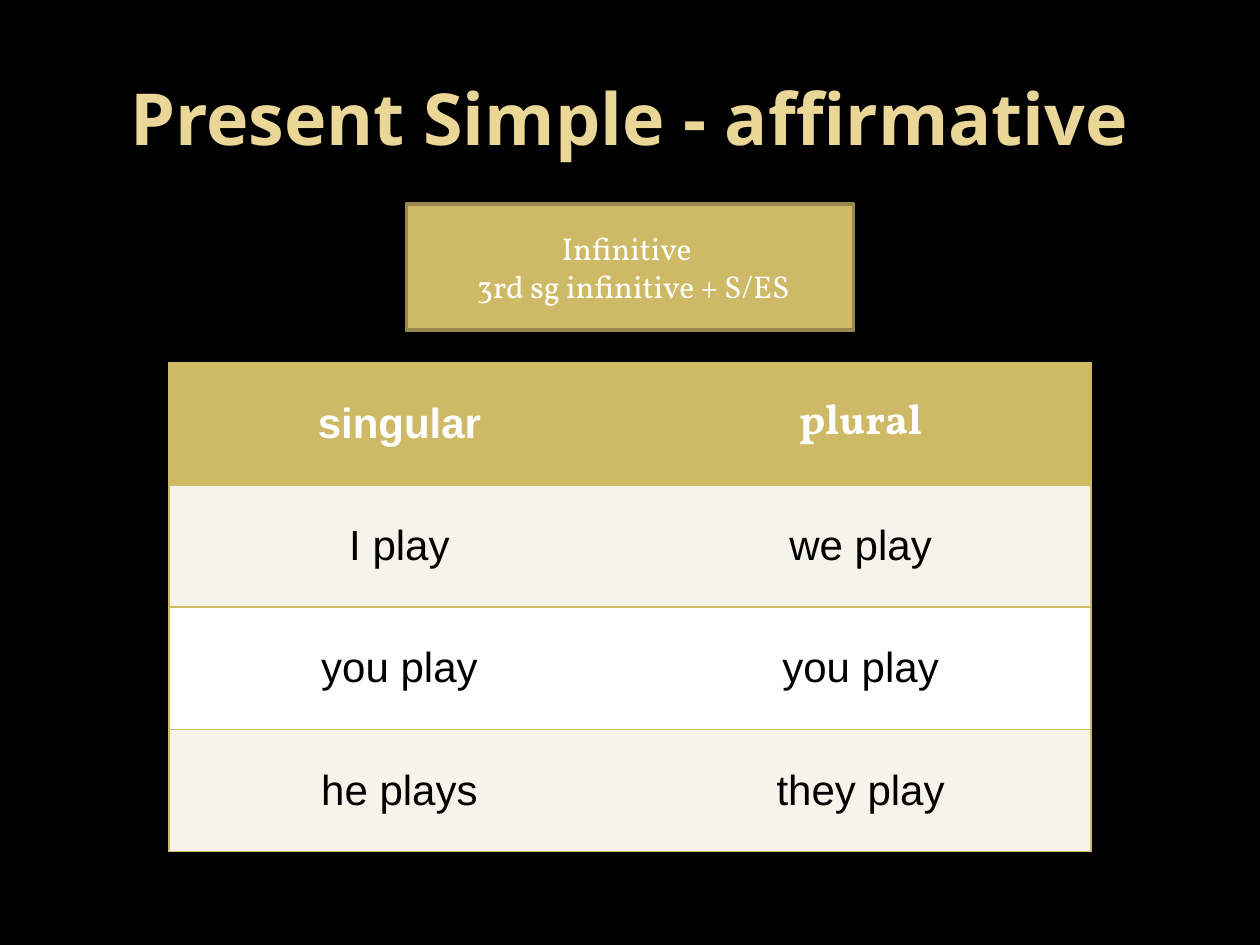
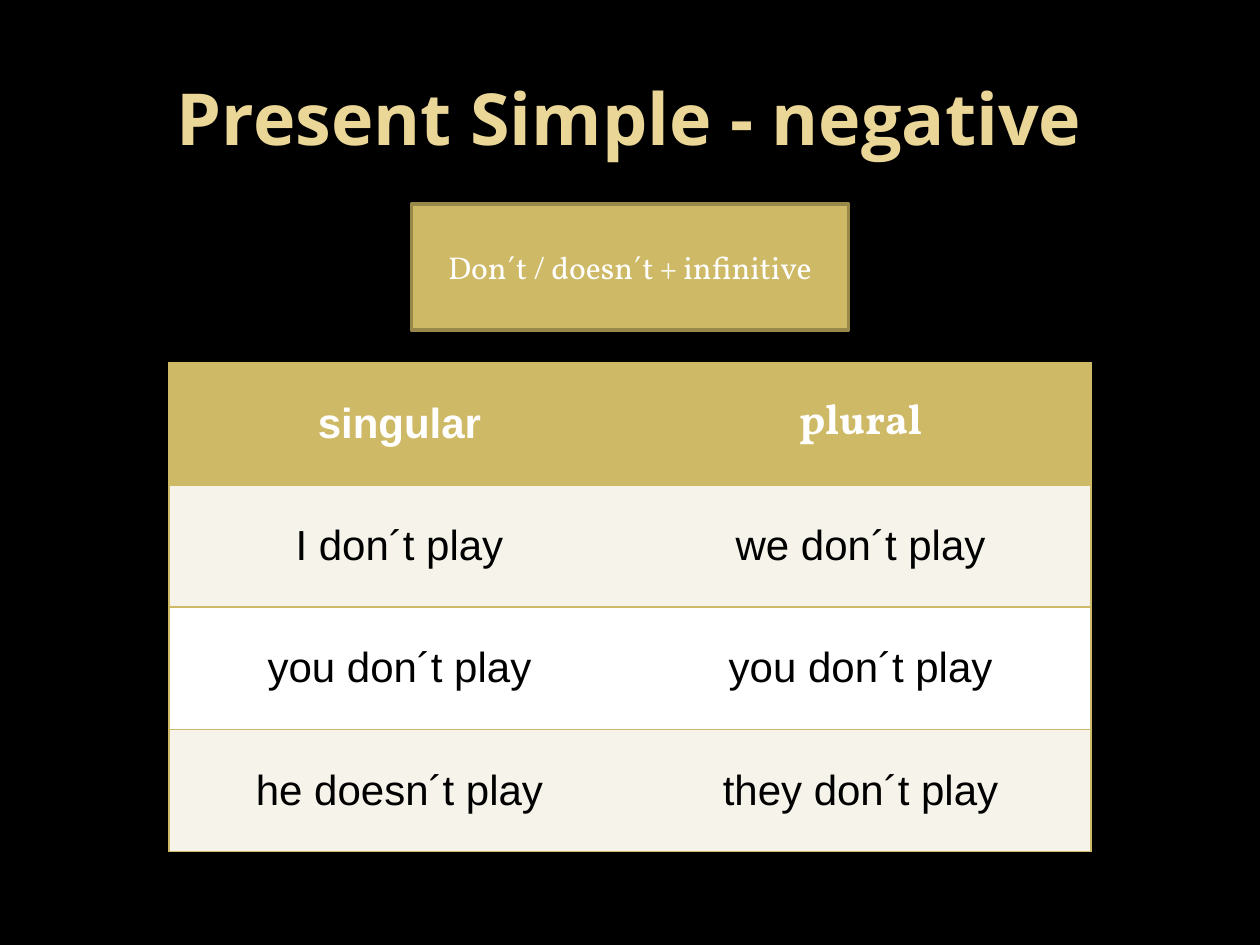
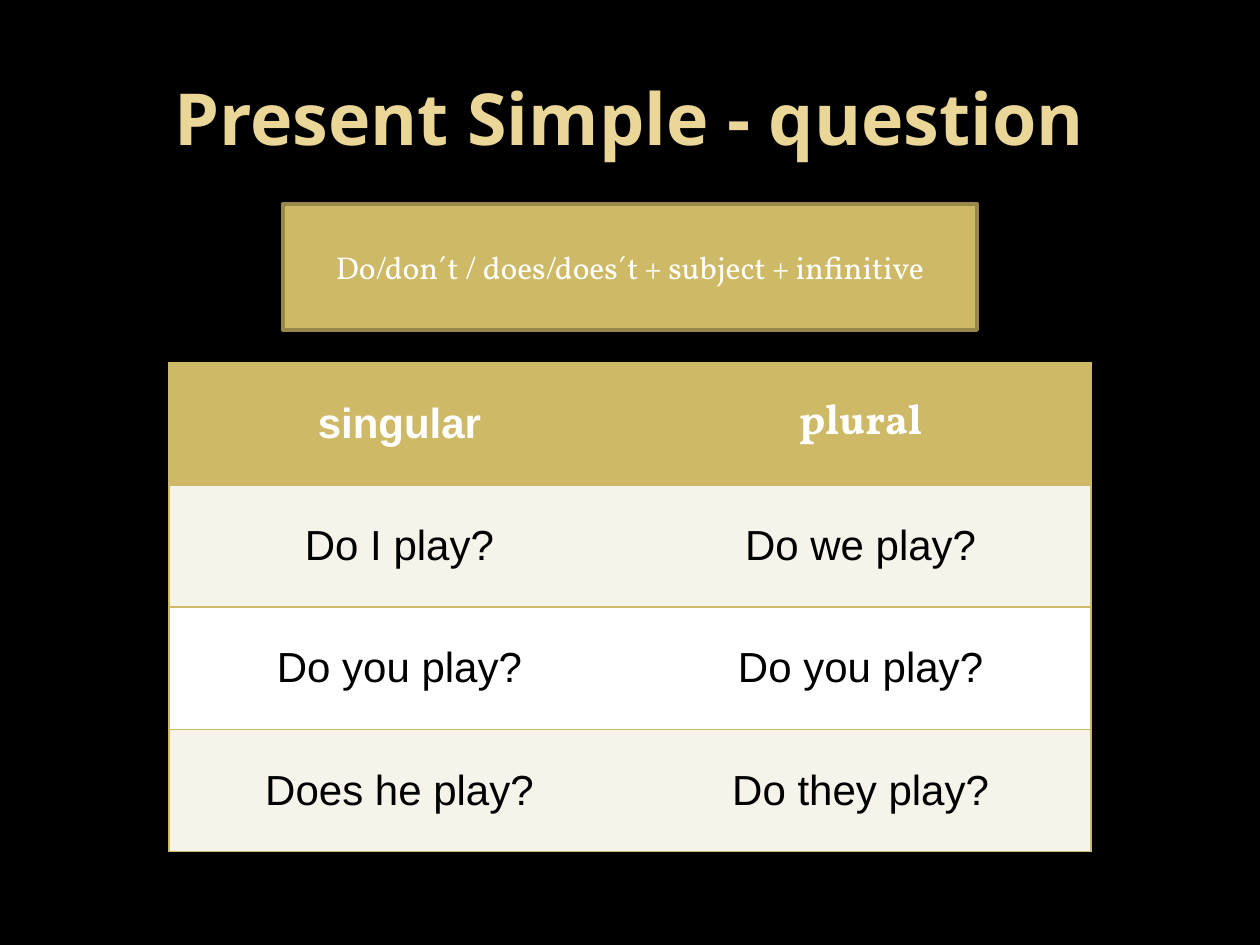
from dataclasses import dataclass

from lxml import etree
from pptx import Presentation, util as u
from pptx.dml.color import RGBColor
from pptx.enum import shapes, text as t
from pptx.oxml.ns import qn


@dataclass(frozen=True)
class Theme:
    back: str = "000000"
    title: str = "EAD696"
    gold: str = "CEB966"
    edge: str = "98894B"
    pale: str = "F6F3EA"
    white: str = "FFFFFF"
    ink: str = "000000"
    head: str = "Open Sans"
    serif: str = "Vollkorn"
    sans: str = "Arial"
    big: int = 41
    mid: int = 24
    small: int = 18


TH = Theme()
WIDE, HIGH = 10, 7.5
PLAIN = "{2D5ABB26-0587-4C30-8999-92F81FD0307C}"  # table style without grid

# Title, rule lines, width of the rule box, table rows
TENSES = [
    ("affirmative", ["Infinitive ", " 3rd sg infinitive + S/ES"], 3.55,
     [("I play", "we play"), ("you play", "you play"),
      ("he plays", "they play")]),
    ("negative", ["Don´t / doesn´t + infinitive"], 3.47,
     [("I don´t play", "we don´t play"), ("you don´t play", "you don´t play"),
      ("he doesn´t play", "they don´t play")]),
    ("question", ["Do/don´t / does/does´t + subject + infinitive"], 5.51,
     [("Do I play?", "Do we play?"), ("Do you play?", "Do you play?"),
      ("Does he play?", "Do they play?")]),
]


def center(width, top, height):
    """Box centred across the slide, as left, top, width, height."""
    return [u.Inches(n) for n in ((WIDE - width) / 2, top, width, height)]


def paint(fill, color):
    fill.solid()
    fill.fore_color.rgb = RGBColor.from_string(color)


def write(frame, *lines, font, size, color, bold=False):
    frame.word_wrap = True
    frame.vertical_anchor = t.MSO_ANCHOR.MIDDLE
    for i, line in enumerate(lines):
        para = frame.add_paragraph() if i else frame.paragraphs[0]
        para.alignment = t.PP_ALIGN.CENTER
        run = para.add_run()
        run.text = line
        run.font.name, run.font.size = font, u.Pt(size)
        run.font.bold = bold
        run.font.color.rgb = RGBColor.from_string(color)


def border(cell, sides, color):
    """Draw 1 pt lines on the given sides; must come before the cell's fill."""
    props = cell._tc.get_or_add_tcPr()
    for side in sides:
        line = etree.SubElement(props, qn(f"a:ln{side}"), w=str(u.Pt(1)))
        solid = etree.SubElement(line, qn("a:solidFill"))
        etree.SubElement(solid, qn("a:srgbClr"), val=color)


def add_title(slide, box, name):
    title = slide.shapes.title
    title.left, title.top, title.width, title.height = box
    write(title.text_frame, f"Present Simple - {name}", font=TH.head,
          size=TH.big, color=TH.title, bold=True)


def add_forms(slide, box, forms):
    rows = [("singular", "plural"), *forms]
    table = slide.shapes.add_table(len(rows), 2, *box).table
    table._tbl.tblPr.find(qn("a:tableStyleId")).text = PLAIN
    for r, row in enumerate(rows):
        for c, words in enumerate(row):
            cell = table.cell(r, c)
            border(cell, "RTB" if c else "LTB", TH.gold)
            cell.vertical_anchor = t.MSO_ANCHOR.MIDDLE
            if r == 0:
                paint(cell.fill, TH.gold)
                write(cell.text_frame, words, size=TH.mid, color=TH.white,
                      font=TH.serif if c else TH.sans, bold=True)
            else:
                paint(cell.fill, TH.pale if r % 2 else TH.white)
                write(cell.text_frame, words, size=TH.mid, color=TH.ink,
                      font=TH.sans)


def add_rule(slide, box, lines):
    rule = slide.shapes.add_shape(shapes.MSO_SHAPE.RECTANGLE, *box)
    rule.shadow.inherit = False
    paint(rule.fill, TH.gold)
    paint(rule.line.fill, TH.edge)
    rule.line.width = u.Pt(2)
    write(rule.text_frame, *lines, font=TH.serif, size=TH.small,
          color=TH.white)


def main():
    deck = Presentation()
    deck.slide_width, deck.slide_height = u.Inches(WIDE), u.Inches(HIGH)
    paint(deck.slide_master.background.fill, TH.back)
    for name, lines, width, forms in TENSES:
        slide = deck.slides.add_slide(deck.slide_layouts[5])
        add_title(slide, center(0.9 * WIDE, 0.04 * HIGH, 1.25), name)
        add_forms(slide, center(7.32, 2.88, 3.88), forms)
        add_rule(slide, center(width, 1.62, 1), lines)
    deck.save("out.pptx")


if __name__ == "__main__":
    main()
